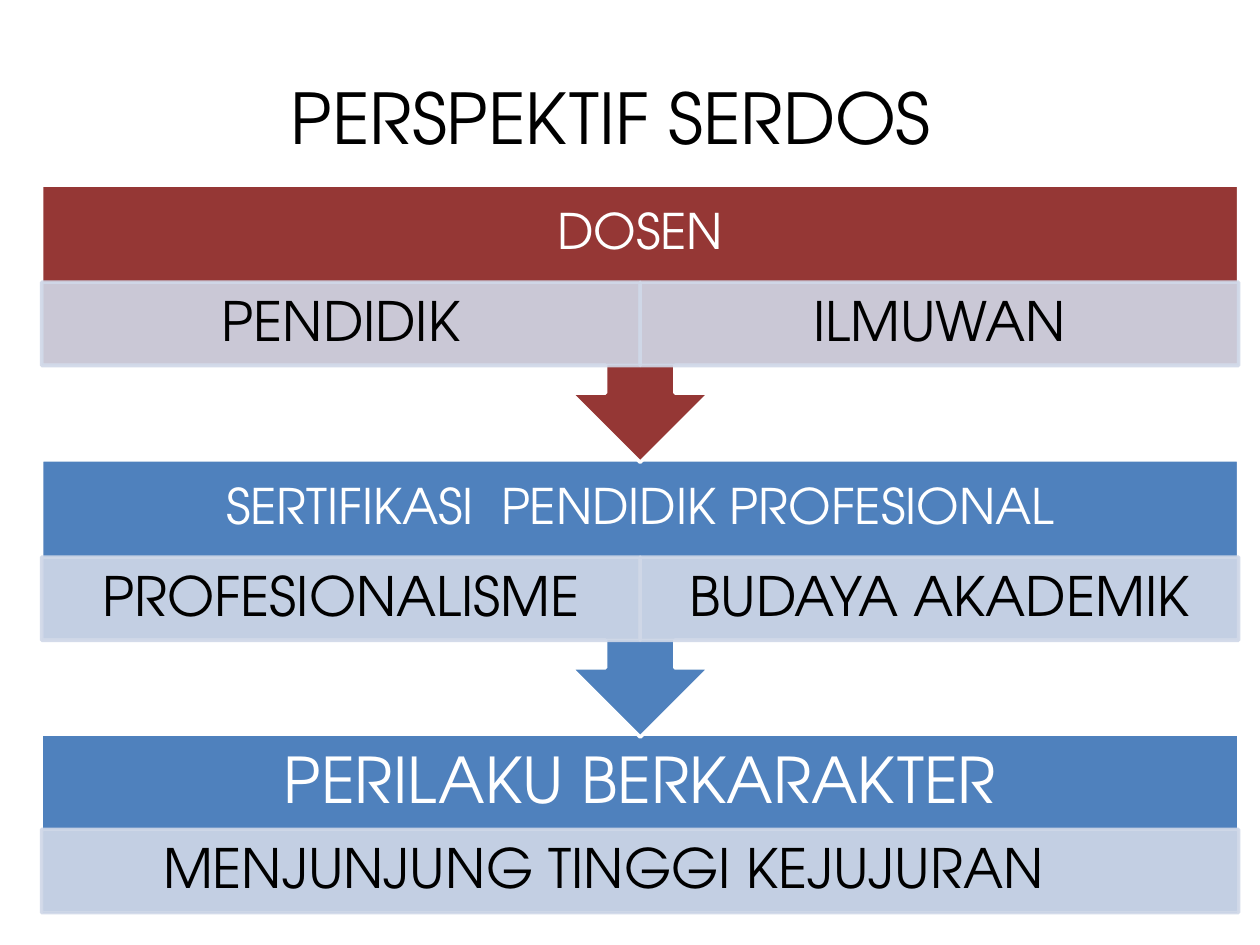
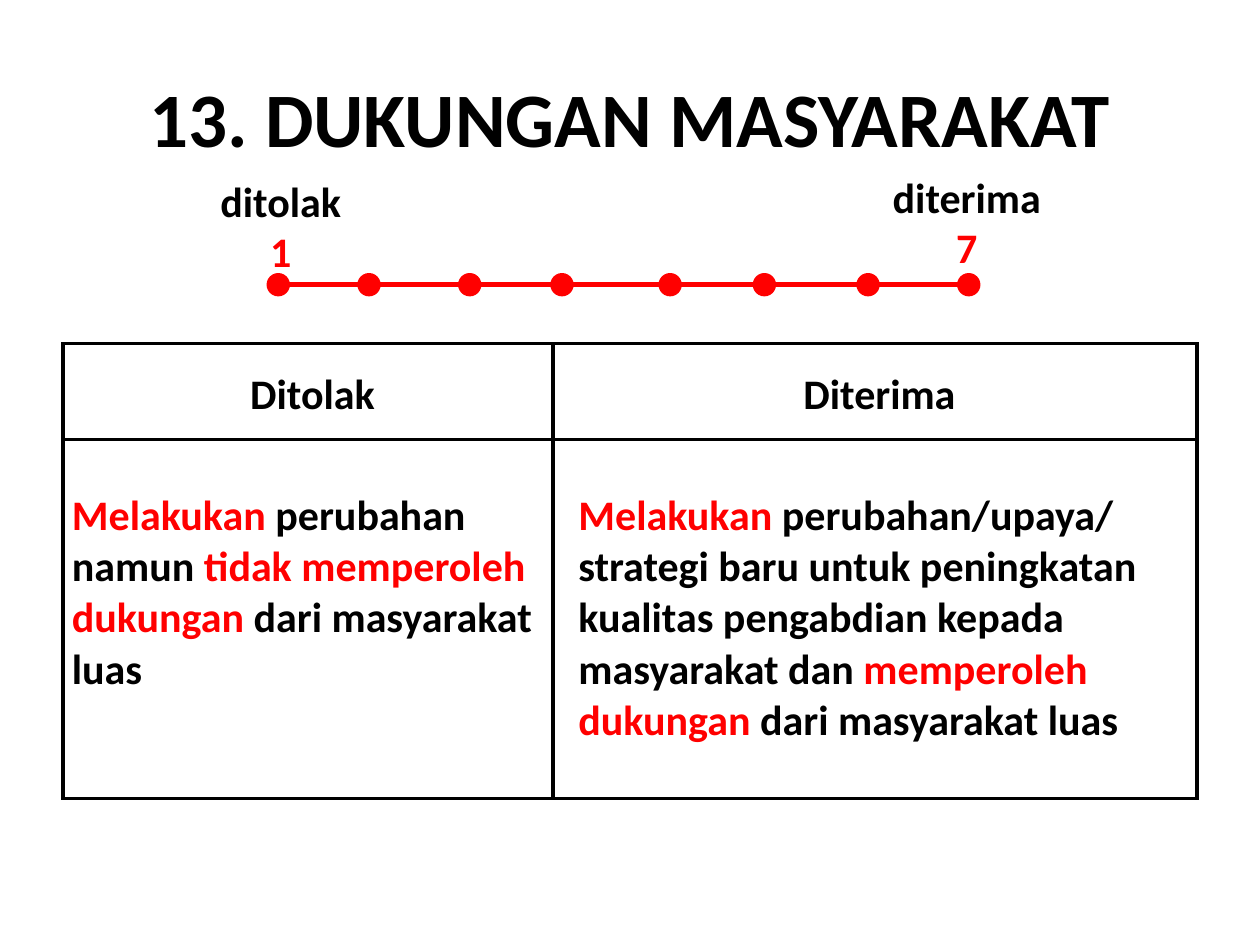
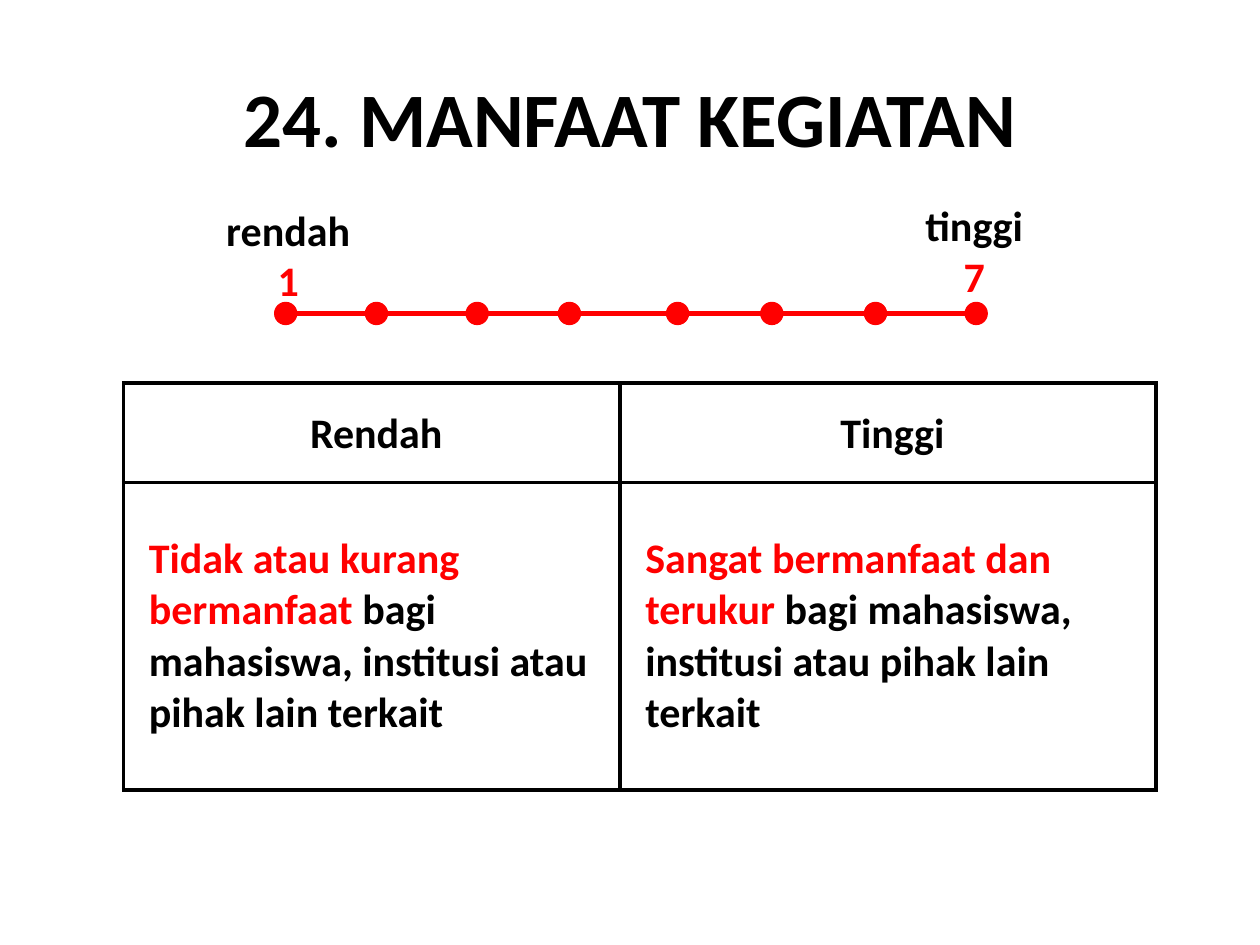
from dataclasses import dataclass
from typing import NamedTuple

from lxml import etree
from pptx import Presentation
from pptx.dml.color import RGBColor
from pptx.enum.shapes import MSO_CONNECTOR, MSO_SHAPE
from pptx.enum.text import MSO_ANCHOR, PP_ALIGN
from pptx.oxml.ns import qn
from pptx.util import Cm, Pt

CENTER, LEFT = PP_ALIGN.CENTER, PP_ALIGN.LEFT
MIDDLE, TOP = MSO_ANCHOR.MIDDLE, MSO_ANCHOR.TOP
RECTANGLE = MSO_SHAPE.RECTANGLE
ARROW_CALLOUT = MSO_SHAPE.UP_ARROW_CALLOUT
DOT = MSO_SHAPE.FLOWCHART_CONNECTOR
STRAIGHT = MSO_CONNECTOR.STRAIGHT


@dataclass(frozen=True)
class Theme:
    ink: str = "000000"
    paper: str = "FFFFFF"
    accent: str = "FF0000"
    maroon: str = "953735"
    blue: str = "4F81BD"
    pale: str = "D0D8E8"
    pale_opacity: int = 90
    geometric: str = "TeX Gyre Adventor"
    humanist: str = "Calibri"
    title_size: float = 44
    stage_title_size: float = 40
    goal_size: float = 36
    aspect_size: float = 31
    stage_size: float = 28
    body_size: float = 24


THEME = Theme()


class Box(NamedTuple):
    """Left, top, width and height in centimetres."""
    left: float
    top: float
    width: float
    height: float

    def lengths(self):
        return [Cm(value) for value in self]


class Span(NamedTuple):
    text: str
    color: str = THEME.ink


class Insets(NamedTuple):
    left: float = 0.25
    top: float = 0.13
    right: float = 0.25
    bottom: float = 0.13


@dataclass(frozen=True)
class Stage:
    heading: str
    aspects: list[str]
    color: str
    size: float = THEME.stage_size
    heading_height: float = 1.96
    leads_on: bool = True
    aspect_right: float = 0.61


@dataclass(frozen=True)
class Pole:
    """One end of a rating scale with its table column."""
    label: str
    score: str
    label_width: float
    heading: str
    description: list[list[Span]]
    column_width: float
    indent: float = 0.51


@dataclass(frozen=True)
class Rating:
    title: str
    scale_left: float
    scale_top: float
    table_left: float
    table_top: float
    row_heights: tuple[float, float]
    poles: tuple[Pole, Pole]


# Shared drawing functions
def write(frame, paragraphs: list[list[Span]], *, font: str = THEME.humanist,
          size: float = THEME.body_size, bold: bool = False, align=CENTER,
          spacing: float = 1.0) -> None:
    for index, spans in enumerate(paragraphs):
        paragraph = frame.add_paragraph() if index else frame.paragraphs[0]
        paragraph.alignment = align
        paragraph.line_spacing = spacing
        for span in spans:
            run = paragraph.add_run()
            run.text = span.text
            run.font.name = font
            run.font.size = Pt(size)
            run.font.bold = bold
            run.font.color.rgb = RGBColor.from_string(span.color)


def set_insets(target, insets: Insets) -> None:
    target.margin_left, target.margin_top, target.margin_right, target.margin_bottom = (
        Cm(value) for value in insets)


def add_label(slide, box: Box, paragraphs: list[list[Span]], *, anchor=MIDDLE,
              insets: Insets = Insets(), wrap: bool = True, **text_format) -> None:
    frame = slide.shapes.add_textbox(*box.lengths()).text_frame
    frame.word_wrap = wrap
    frame.vertical_anchor = anchor
    set_insets(frame, insets)
    write(frame, paragraphs, **text_format)


def add_block(slide, kind, box: Box, fill: str, line: str, opacity: int = 100):
    block = slide.shapes.add_shape(kind, *box.lengths())
    block.shadow.inherit = False
    block.fill.solid()
    block.fill.fore_color.rgb = RGBColor.from_string(fill)
    block.line.color.rgb = RGBColor.from_string(line)
    block.line.width = Pt(2)
    if opacity < 100:
        for color in block._element.spPr.iter(qn("a:srgbClr")):
            etree.SubElement(color, qn("a:alpha")).set("val", str(opacity * 1000))
    return block


def add_title(slide, title: str, *, insets: Insets = Insets(), **text_format) -> None:
    add_label(slide, Box(1.27, 0.76, 22.86, 3.18), [[Span(title)]],
              insets=insets, **text_format)


# Stage diagram
STAGES_LEFT, STAGES_TOP, STAGES_WIDTH = 0.84, 3.73, 24.13
STAGE_STEP, CALLOUT_HEIGHT, GOAL_HEIGHT, ASPECT_HEIGHT = 5.54, 5.59, 3.63, 1.68


def add_stage(slide, stage: Stage, top: float) -> None:
    kind, height = ((ARROW_CALLOUT, CALLOUT_HEIGHT) if stage.leads_on
                    else (RECTANGLE, GOAL_HEIGHT))
    body = add_block(slide, kind, Box(STAGES_LEFT, top, STAGES_WIDTH, height),
                     stage.color, THEME.paper)
    if stage.leads_on:
        body.rotation = 180
    add_label(slide, Box(STAGES_LEFT, top, STAGES_WIDTH, 1.96),
              [[Span(stage.heading, THEME.paper)]], insets=Insets(0.56, 0.56, 0.56, 0.56),
              font=THEME.geometric, size=stage.size, spacing=0.9)

    aspect_width = STAGES_WIDTH / len(stage.aspects)
    for column, aspect in enumerate(stage.aspects):
        box = Box(STAGES_LEFT + column * aspect_width, top + stage.heading_height,
                  aspect_width, ASPECT_HEIGHT)
        frame = add_block(slide, RECTANGLE, box, THEME.pale, THEME.pale,
                          THEME.pale_opacity).text_frame
        frame.word_wrap = True
        frame.vertical_anchor = MIDDLE
        set_insets(frame, Insets(0.61, 0.1, stage.aspect_right, 0.1))
        write(frame, [[Span(aspect)]], font=THEME.geometric,
              size=THEME.aspect_size, spacing=0.9)


def build_perspective(slide, stages: list[Stage]) -> None:
    add_title(slide, "PERSPEKTIF SERDOS", font=THEME.geometric,
              size=THEME.stage_title_size, insets=Insets(right=1.02))
    # The last stage lies at the back, so each arrow tip covers the next heading
    for index, stage in reversed(list(enumerate(stages))):
        add_stage(slide, stage, STAGES_TOP + index * STAGE_STEP)


# Rating scale
DOT_SIZE = 0.4
DOT_OFFSETS = (0, 1.83, 3.86, 5.72, 7.9, 9.8, 11.89, 13.92)
LABEL_CENTERS = (0.25, 14.08)
LABEL_RISES = (2.13, 2.22)


def add_scale(slide, rating: Rating) -> None:
    left, top = rating.scale_left, rating.scale_top
    line_y = Cm(top + DOT_SIZE / 2)
    axis = slide.shapes.add_connector(STRAIGHT, Cm(left + 0.13), line_y,
                                      Cm(left + 14), line_y)
    axis.line.color.rgb = RGBColor.from_string(THEME.accent)
    axis.line.width = Pt(3)
    etree.SubElement(axis._element.spPr, qn("a:effectLst"))
    for offset in DOT_OFFSETS:
        add_block(slide, DOT, Box(left + offset, top, DOT_SIZE, DOT_SIZE),
                  THEME.accent, THEME.accent)
    for pole, center, rise in zip(rating.poles, LABEL_CENTERS, LABEL_RISES):
        box = Box(left + center - pole.label_width / 2, top - rise, pole.label_width, 2.31)
        add_label(slide, box, [[Span(pole.label)], [Span(pole.score, THEME.accent)]],
                  anchor=TOP, wrap=False, bold=True)


# Rating table
def add_borders(cell) -> None:
    properties = cell._tc.get_or_add_tcPr()
    for index, side in enumerate(("lnL", "lnR", "lnT", "lnB")):
        border = etree.Element(qn(f"a:{side}"), w=str(Pt(2.25)))
        fill = etree.SubElement(border, qn("a:solidFill"))
        etree.SubElement(fill, qn("a:srgbClr"), val=THEME.ink)
        properties.insert(index, border)


def fill_cell(cell, paragraphs: list[list[Span]], insets: Insets, **text_format) -> None:
    cell.fill.solid()
    cell.fill.fore_color.rgb = RGBColor.from_string(THEME.paper)
    set_insets(cell, insets)
    add_borders(cell)
    write(cell.text_frame, paragraphs, bold=True, **text_format)


def add_criteria(slide, rating: Rating) -> None:
    box = Box(rating.table_left, rating.table_top,
              sum(pole.column_width for pole in rating.poles), sum(rating.row_heights))
    criteria = slide.shapes.add_table(2, 2, *box.lengths()).table
    criteria.first_row = criteria.horz_banding = False
    for row, height in zip(criteria.rows, rating.row_heights):
        row.height = Cm(height)
    for column, pole in enumerate(rating.poles):
        criteria.columns[column].width = Cm(pole.column_width)
        fill_cell(criteria.cell(0, column), [[Span(pole.heading)]],
                  Insets(0.18, 0, 0, 0), spacing=1.5)
        fill_cell(criteria.cell(1, column), pole.description,
                  Insets(pole.indent, 1.03, 0, 0), align=LEFT)


def build_rating(slide, rating: Rating) -> None:
    add_title(slide, rating.title, size=THEME.title_size, bold=True)
    add_criteria(slide, rating)
    add_scale(slide, rating)


# Content
STAGES = [
    Stage("DOSEN", ["PENDIDIK", "ILMUWAN"], THEME.maroon),
    Stage("SERTIFIKASI  PENDIDIK PROFESIONAL", ["PROFESIONALISME", "BUDAYA AKADEMIK"],
          THEME.blue),
    Stage("PERILAKU BERKARAKTER", ["MENJUNJUNG TINGGI KEJUJURAN"], THEME.blue,
          size=THEME.goal_size, heading_height=1.91, leads_on=False, aspect_right=2.1),
]

RATINGS = [
    Rating(
        "13. DUKUNGAN MASYARAKAT", scale_left=5.41, scale_top=5.54,
        table_left=1.27, table_top=6.93, row_heights=(1.93, 7.24),
        poles=(
            Pole("ditolak", "1", 2.97, "Ditolak",
                 [[Span("Melakukan ", THEME.accent), Span("perubahan namun "),
                   Span("tidak memperoleh dukungan ", THEME.accent),
                   Span("dari masyarakat luas")]],
                 column_width=9.88, indent=0.18),
            Pole("diterima", "7", 3.53, "Diterima",
                 [[Span("Melakukan", THEME.accent),
                   Span(" perubahan/upaya/ strategi baru untuk peningkatan kualitas "
                        "pengabdian kepada masyarakat dan "),
                   Span("memperoleh dukungan ", THEME.accent),
                   Span("dari masyarakat luas")]],
                 column_width=12.98),
        )),
    Rating(
        "24. MANFAAT KEGIATAN", scale_left=5.56, scale_top=6.12,
        table_left=2.49, table_top=7.72, row_heights=(2.01, 6.2),
        poles=(
            Pole("rendah", "1", 3.05, "Rendah",
                 [[Span("Tidak atau kurang bermanfaat ", THEME.accent),
                   Span("bagi mahasiswa, institusi atau pihak lain terkait")]],
                 column_width=10.01),
            Pole("tinggi", "7", 2.51, "Tinggi",
                 [[Span("Sangat bermanfaat dan terukur ", THEME.accent),
                   Span("bagi mahasiswa,")],
                  [Span("institusi atau pihak lain terkait")]],
                 column_width=10.8),
        )),
]


def main() -> None:
    deck = Presentation()
    deck.slide_width, deck.slide_height = Cm(25.4), Cm(19.05)
    blank = deck.slide_layouts[6]
    build_perspective(deck.slides.add_slide(blank), STAGES)
    for rating in RATINGS:
        build_rating(deck.slides.add_slide(blank), rating)
    deck.save("out.pptx")


if __name__ == "__main__":
    main()
